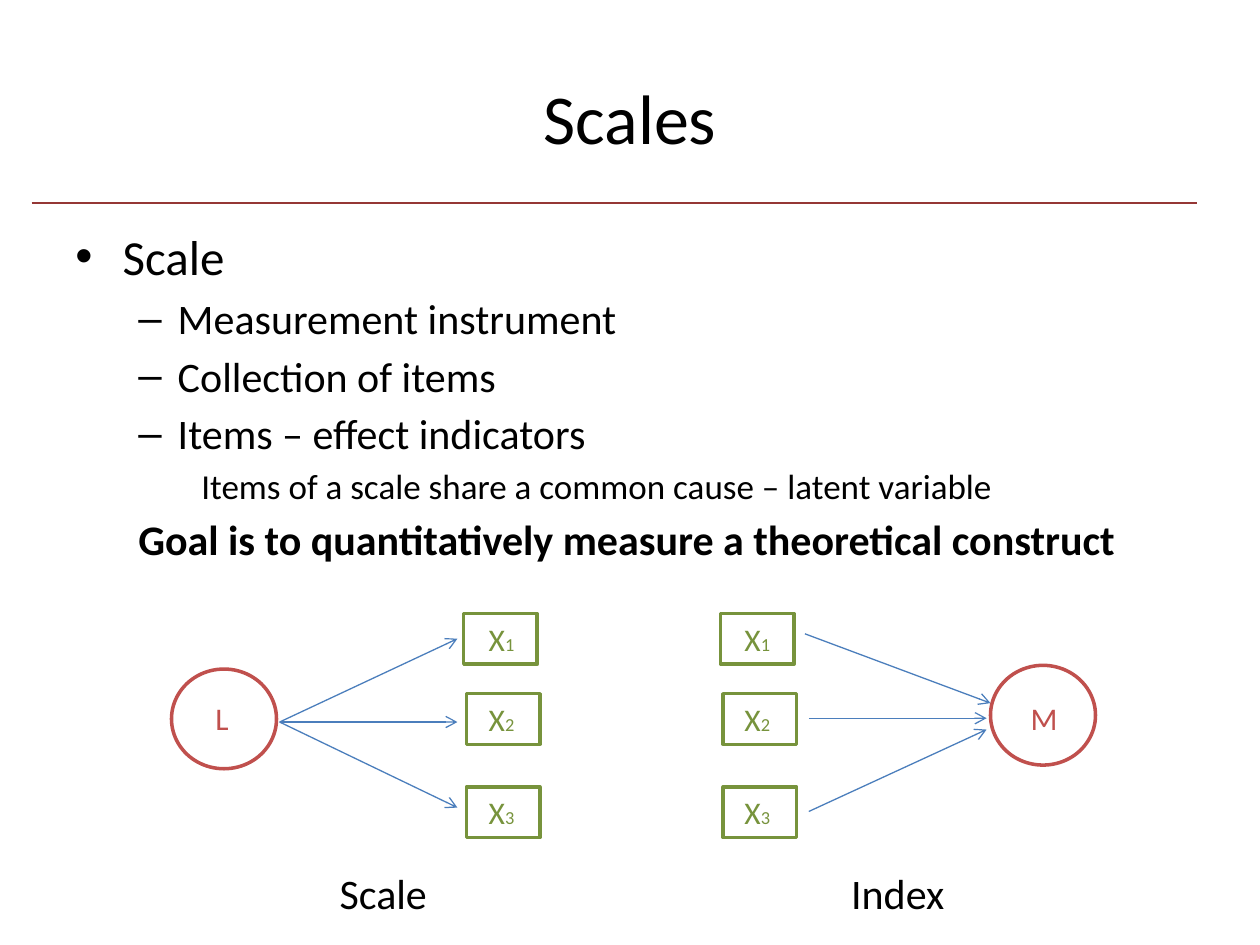
"""Build a slide that contrasts a scale with an index."""
from dataclasses import dataclass
from typing import Optional

import pptx
import pptx.dml.color
import pptx.enum.shapes
import pptx.enum.text
import pptx.oxml
import pptx.oxml.ns
import pptx.util
from lxml import etree

Pt = pptx.util.Pt
SHAPE = pptx.enum.shapes.MSO_SHAPE
ALIGN = pptx.enum.text.PP_ALIGN
FONT = "Calibri"
BLACK, RED, GREEN, BLUE, RULE = "000000", "C0504D", "77933C", "4B7EBC", "953735"


@dataclass
class Bullet:
    text: str
    size: float
    margin: float
    indent: float = 0
    char: Optional[str] = None
    bold: bool = False


@dataclass
class Arrow:
    x1: float
    y1: float
    x2: float
    y2: float


@dataclass
class Diagram:
    caption: str
    caption_x: float
    letter: str
    letter_x: float
    circle_x: float
    circle_y: float
    items_x: float
    labels_x: float
    arrows: list[Arrow]


BULLETS = [
    Bullet("Scale", 28, 27, -27, "•"),
    Bullet("Measurement instrument", 24, 58.5, -22.5, "–"),
    Bullet("Collection of items", 24, 58.5, -22.5, "–"),
    Bullet("Items – effect indicators", 24, 58.5, -22.5, "–"),
    Bullet("Items of a scale share a common cause – latent variable", 20, 72),
    Bullet("Goal is to quantitatively measure a theoretical construct", 24, 36, bold=True),
]
DIAGRAMS = [
    Diagram("Scale", 108, "L", 116, 98, 382.3, 265, 272.2,
            [Arrow(159.8, 412.6, 261.4, y) for y in (365, 412.6, 461.5)]),
    Diagram("Index", 402, "M", 581.8, 566, 380.2, 411.8, 418.3,
            [Arrow(462.2, 463.7, 563.8, 416.9), Arrow(462.2, 410.4, 563.8, 410.4),
             Arrow(460, 362.2, 566, 401.8)]),
]
ITEM_TOPS = [350.6, 396.4, 449.7]


def rgb(value: str) -> pptx.dml.color.RGBColor:
    """Turn a hex string into a colour."""
    return pptx.dml.color.RGBColor.from_string(value)


def style(r, size: float, color: str, bold: bool = False) -> None:
    """Format one run."""
    r.font.name, r.font.size, r.font.bold = FONT, Pt(size), bold
    r.font.color.rgb = rgb(color)


def add_frame(s, x: float, y: float, w: float, h: float):
    """Add a wrapping text box and return its text frame."""
    tf = s.shapes.add_textbox(Pt(x), Pt(y), Pt(w), Pt(h)).text_frame
    tf.word_wrap = True
    return tf


def add_text(s, x: float, y: float, w: float, h: float, text: str, size: float,
             color: str, align=ALIGN.LEFT, sub: str = ""):
    """Add one line of text with an optional small suffix."""
    tf = add_frame(s, x, y, w, h)
    tf.text = text
    p = tf.paragraphs[0]
    p.alignment = align
    style(p.runs[0], size, color)
    if sub:
        r = p.add_run()
        r.text = sub
        style(r, 10.5, color)
    return tf


def add_outline(s, kind, x: float, y: float, w: float, h: float, color: str) -> None:
    """Add an unfilled preset shape."""
    sp = s.shapes.add_shape(kind, Pt(x), Pt(y), Pt(w), Pt(h))
    sp.shadow.inherit = False
    sp.fill.background()
    sp.line.color.rgb = rgb(color)
    sp.line.width = Pt(2)


def add_line(s, a: Arrow, color: str, width: float, head: bool = True) -> None:
    """Add a straight line, with an open arrowhead if wanted."""
    sp = s.shapes.add_connector(pptx.enum.shapes.MSO_CONNECTOR.STRAIGHT,
                                Pt(a.x1), Pt(a.y1), Pt(a.x2), Pt(a.y2))
    sp.line.color.rgb = rgb(color)
    sp.line.width = Pt(width)
    if head:
        etree.SubElement(sp.line._get_or_add_ln(), pptx.oxml.ns.qn("a:tailEnd"), type="arrow")
    etree.SubElement(sp._element.spPr, pptx.oxml.ns.qn("a:effectLst"))


def add_bullets(s, bullets: list[Bullet]) -> None:
    """Add the body text."""
    tf = add_frame(s, 36, 126, 648, 210)
    for i, b in enumerate(bullets):
        p = tf.add_paragraph() if i else tf.paragraphs[0]
        p.text = b.text
        pPr = p._p.get_or_add_pPr()
        pPr.set("marL", str(Pt(b.margin)))
        pPr.set("indent", str(Pt(b.indent)))
        if i:
            p.space_before = Pt(round(b.size * 0.17, 1))
        if b.char:
            etree.SubElement(pPr, pptx.oxml.ns.qn("a:buFont"), typeface="Arial")
            etree.SubElement(pPr, pptx.oxml.ns.qn("a:buChar"), char=b.char)
        else:
            etree.SubElement(pPr, pptx.oxml.ns.qn("a:buNone"))
        style(p.runs[0], b.size, BLACK, b.bold)


def add_diagram(s, d: Diagram) -> None:
    """Add a construct, its three items, the arrows and the caption."""
    add_text(s, d.letter_x, 396, 24, 29, d.letter, 18, RED)
    add_outline(s, SHAPE.OVAL, d.circle_x, d.circle_y, 60, 57, RED)
    for a in d.arrows:
        add_line(s, a, BLUE, 0.75)
    for i, y in enumerate(ITEM_TOPS):
        add_text(s, d.labels_x, y, 36, 29, "X", 18, GREEN, sub=str(i + 1))
        add_outline(s, SHAPE.RECTANGLE, d.items_x + (1.5 if i else 0), y, 42, 29, GREEN)
    add_text(s, d.caption_x, 492, 222, 36, d.caption, 24, BLACK, ALIGN.CENTER)


def main() -> None:
    """Build and save the slide."""
    prs = pptx.Presentation()
    prs.slide_width, prs.slide_height = Pt(720), Pt(540)
    s = prs.slides.add_slide(prs.slide_layouts[6])
    add_line(s, Arrow(18, 116, 684, 116), RULE, 1.5, head=False)
    tf = add_text(s, 36, 21.6, 648, 90, "Scales", 40, BLACK, ALIGN.CENTER)
    tf.vertical_anchor = pptx.enum.text.MSO_ANCHOR.MIDDLE
    add_bullets(s, BULLETS)
    for d in DIAGRAMS:
        add_diagram(s, d)
    prs.save("out.pptx")


if __name__ == "__main__":
    main()
